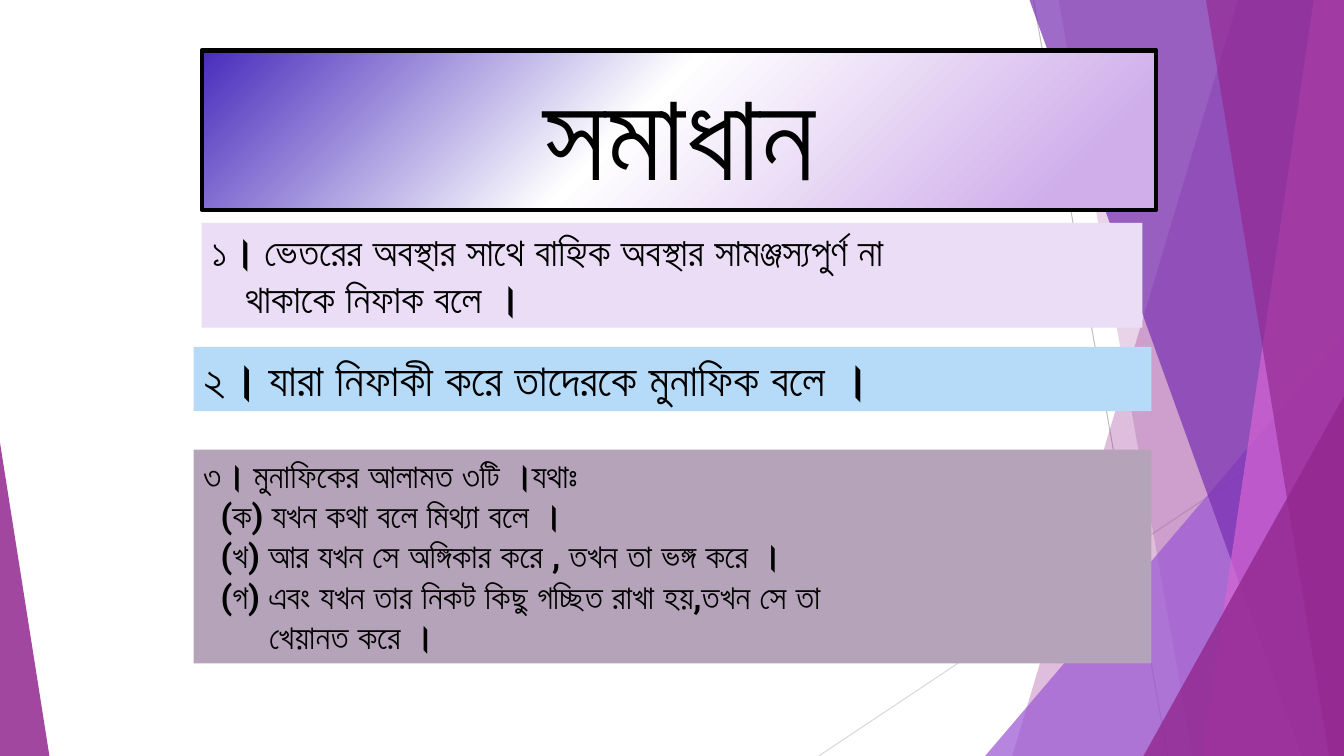
import pptx
import pptx.util
import pptx.dml.color
import pptx.enum.shapes
import pptx.enum.text
import pptx.oxml
import pptx.oxml.ns
from lxml import etree

THEME = {
    "plum": "92278F", "lilac": "9B57D3", "violet": "762EB1", "pink": "D665D3",
    "ink": "000000", "ray": "BFBFBF", "pale_ray": "D9D9D9",
    "answer_1": "EBDDF6", "answer_2": "B5DBF8", "answer_3": "B5A3B9",
    "title_stops": [(10, "CFAEEA"), (55, "FFFFFF"), (100, "482CBC")],
    "title_font": "Calibri", "body_font": "Roboto",
    "title_size": 88, "answer_sizes": (28, 32, 24),
}
DRAWING_NS = "http://schemas.openxmlformats.org/drawingml/2006/main"
SHAPES = pptx.enum.shapes.MSO_SHAPE
ALIGN = pptx.enum.text.PP_ALIGN
RGB = pptx.dml.color.RGBColor.from_string

deck = pptx.Presentation()
deck.slide_width = pptx.util.Inches(13.33)
deck.slide_height = pptx.util.Inches(7.5)
slide = deck.slides.add_slide(deck.slide_layouts[6])


def place(*shares):
    """Turn alternating x, y percentages of the slide into lengths."""
    sides = (deck.slide_width, deck.slide_height)
    return [int(share * sides[i % 2] / 100) for i, share in enumerate(shares)]


def write(panel, lines, font, size, align):
    """Fill a panel with bold lines, each given as (indent in inches, text)."""
    frame = panel.text_frame
    frame.word_wrap = True
    frame.auto_size = pptx.enum.text.MSO_AUTO_SIZE.SHAPE_TO_FIT_TEXT
    for number, (indent, text) in enumerate(lines):
        paragraph = frame.add_paragraph() if number else frame.paragraphs[0]
        paragraph.alignment = align
        if indent:
            paragraph._p.get_or_add_pPr().set("marL", str(pptx.util.Inches(indent)))
        run = paragraph.add_run()
        run.text = text
        run.font.name, run.font.size, run.font.bold = font, pptx.util.Pt(size), True
        run.font.color.rgb = RGB(THEME["ink"])


# Thin rays behind the facets
for ends, colour in [((76.9, 0, 86.88, 100), "ray"), ((100, 53.73, 60.92, 100), "pale_ray")]:
    ray = slide.shapes.add_connector(pptx.enum.shapes.MSO_CONNECTOR.STRAIGHT, *place(*ends))
    ray.line.color.rgb = RGB(THEME[colour])
    ray.line.width = pptx.util.Pt(0.75)
    etree.SubElement(ray._element.spPr, pptx.oxml.ns.qn("a:effectLst"))

# Translucent facets: slabs run from a top x to a bottom x and fill up to the
# right edge; wedges stand on the bottom edge (left, top, width, apex)
facets = [
    ("slab", (92.13, 75.32), "plum", 30),
    ("slab", (78.77, 88.75), "plum", 20),
    ("wedge", (73.3, 44.4, 26.7, 1), "lilac", 72),
    ("slab", (76.6, 96.85), "violet", 70),
    ("slab", (97.75, 89.43), "pink", 70),
    ("slab", (89.73, 98.88), "plum", 65),
    ("wedge", (85.08, 52.4, 14.92, 1), "plum", 80),
    ("wedge", (0, 58.53, 3.68, 0), "plum", 85),
]
for kind, form, colour, opacity in facets:
    if kind == "slab":
        top_x, bottom_x = form
        outline = slide.shapes.build_freeform(*place(top_x, 0))
        corners = [place(100, 0), place(100, 100), place(bottom_x, 100)]
        outline.add_line_segments(corners, close=True)
        facet = outline.convert_to_shape()
    else:
        left, top, width, apex = form
        facet = slide.shapes.add_shape(
            SHAPES.ISOSCELES_TRIANGLE, *place(left, top, width, 100 - top))
        facet.adjustments[0] = apex
    facet.shadow.inherit = False
    facet.line.fill.background()
    facet.fill.solid()
    facet.fill.fore_color.rgb = RGB(THEME[colour])
    tint = facet._element.spPr.find(".//" + pptx.oxml.ns.qn("a:srgbClr"))
    etree.SubElement(tint, pptx.oxml.ns.qn("a:alpha"), val=str(opacity * 1000))

# Title panel with a gradient spreading from its lower right corner
title = slide.shapes.add_shape(SHAPES.RECTANGLE, *place(15, 6.67, 71.04, 21.07))
title.shadow.inherit = False
title.line.color.rgb = RGB(THEME["ink"])
title.line.width = pptx.util.Pt(3)
stops = "".join(
    f'<a:gs pos="{share * 1000}"><a:srgbClr val="{colour}"/></a:gs>'
    for share, colour in THEME["title_stops"])
gradient = pptx.oxml.parse_xml(
    f'<a:gradFill xmlns:a="{DRAWING_NS}" rotWithShape="1"><a:gsLst>{stops}</a:gsLst>'
    '<a:path path="circle"><a:fillToRect l="100000" t="100000"/></a:path></a:gradFill>')
title._element.spPr.find(pptx.oxml.ns.qn("a:prstGeom")).addnext(gradient)
title.text_frame.vertical_anchor = pptx.enum.text.MSO_ANCHOR.BOTTOM
write(title, [(0, "সমাধান")], THEME["title_font"], THEME["title_size"], ALIGN.CENTER)

# Answer panels
answers = [
    ((15, 29.47, 70, 13.87), "answer_1", ALIGN.JUSTIFY, [
        (0, "১। ভেতরের অবস্থার সাথে বাহ্যিক অবস্থার সামঞ্জস্যপুর্ণ না"),
        (0.33, "থাকাকে নিফাক বলে ।")]),
    ((14.4, 45.87, 71.27, 8.53), "answer_2", ALIGN.LEFT, [
        (0, "২। যারা নিফাকী করে তাদেরকে মুনাফিক বলে ।")]),
    ((14.4, 59.47, 71.27, 28.27), "answer_3", ALIGN.LEFT, [
        (0, "৩। মুনাফিকের আলামত ৩টি ।যথাঃ"),
        (0.17, "(ক) যখন কথা বলে মিথ্যা বলে ।"),
        (0.17, "(খ) আর যখন সে অঙ্গিকার করে , তখন তা ভঙ্গ করে ।"),
        (0.17, "(গ) এবং যখন তার নিকট কিছু গচ্ছিত রাখা হয়,তখন সে তা"),
        (0.65, "খেয়ানত করে ।")]),
]
for (area, colour, align, lines), size in zip(answers, THEME["answer_sizes"]):
    answer = slide.shapes.add_shape(SHAPES.RECTANGLE, *place(*area))
    answer.shadow.inherit = False
    answer.line.fill.background()
    answer.fill.solid()
    answer.fill.fore_color.rgb = RGB(THEME[colour])
    answer.text_frame.vertical_anchor = pptx.enum.text.MSO_ANCHOR.TOP
    write(answer, lines, THEME["body_font"], size, align)

deck.save("out.pptx")
